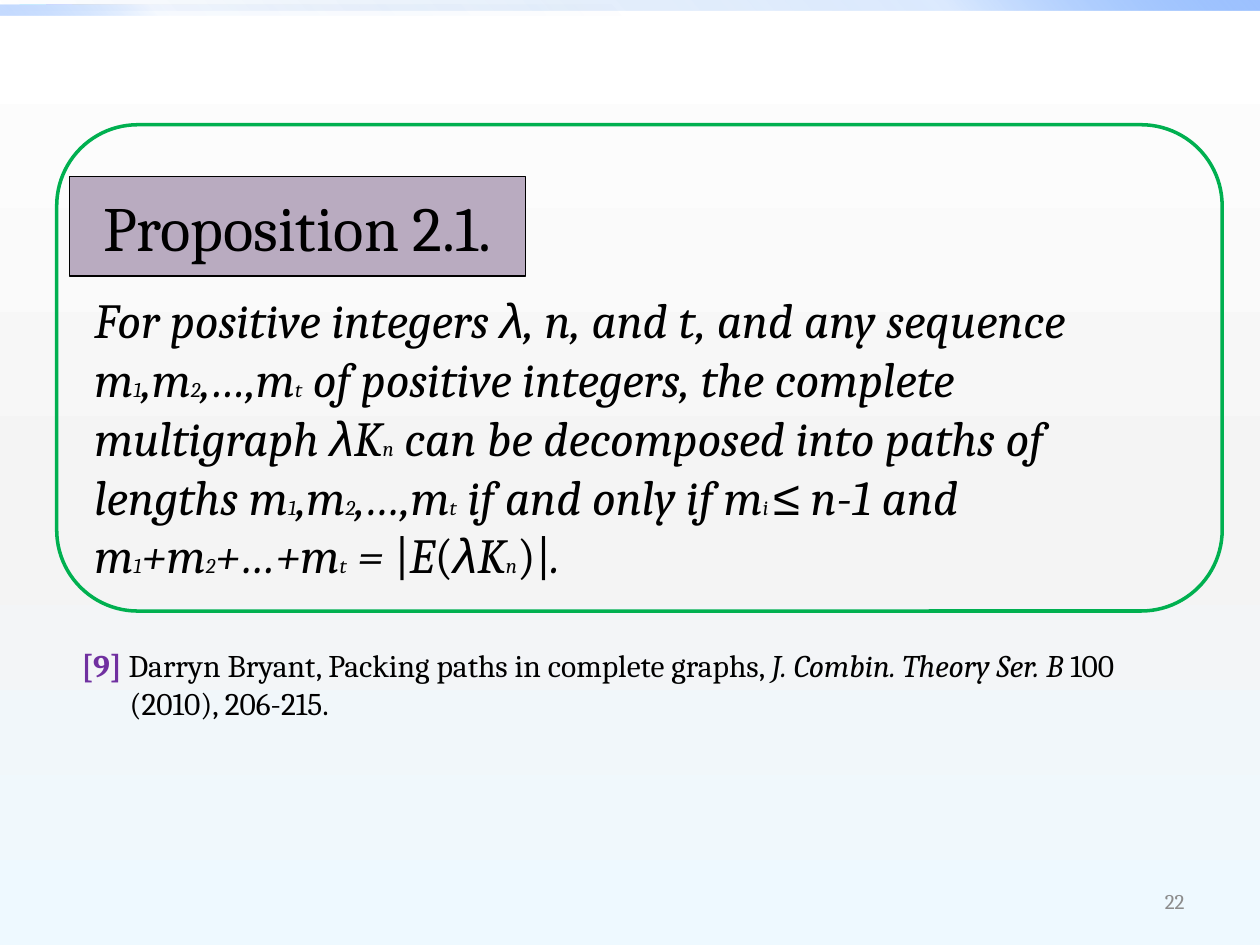
"""Build the slide that states Proposition 2.1 on path decompositions."""
from itertools import groupby

from lxml.etree import SubElement
from pptx import Presentation
from pptx.dml.color import RGBColor
from pptx.enum.shapes import MSO_SHAPE
from pptx.enum.text import MSO_ANCHOR, MSO_AUTO_SIZE, PP_ALIGN
from pptx.oxml.ns import qn
from pptx.util import Inches, Pt

BLACK = RGBColor(0x00, 0x00, 0x00)
GREY = RGBColor(0x8C, 0x8C, 0x8C)
PURPLE = RGBColor(0x70, 0x30, 0xA0)
MAUVE = RGBColor(0xB9, 0xAB, 0xC0)
GREEN = RGBColor(0x00, 0xB0, 0x50)
WHITE = RGBColor(0xFF, 0xFF, 0xFF)
MIST = RGBColor(0xF4, 0xF4, 0xF4)
ICE = RGBColor(0xEE, 0xF9, 0xFF)
NAVY = RGBColor(0x00, 0x58, 0xB7)
BLUE = RGBColor(0x4F, 0x95, 0xFF)
SKY = RGBColor(0x9E, 0xC2, 0xFF)


def add_run(p, text, size=28, font="Cambria", color=BLACK, bold=False, italic=False):
    r = p.add_run()
    r.text = text
    f = r.font
    f.size, f.name, f.bold, f.italic = Pt(size), font, bold, italic
    f.color.rgb = color


def add_math(p, text, italic=True):
    for i, part in enumerate(text.split("~")):
        for symbol, chars in groupby(part, lambda c: c in "λ≤"):
            add_run(p, "".join(chars), size=12 if i % 2 else 28,
                    font="Arial" if symbol else "Cambria", italic=italic)


def set_gradient(fill, element, angle, stops):
    fill.gradient()
    fill.gradient_angle = 360 - angle
    gs_list = element.find(".//" + qn("a:gsLst"))
    for gs in list(gs_list):
        gs_list.remove(gs)
    for pos, color, opacity in stops:
        gs = SubElement(gs_list, qn("a:gs"), pos=str(pos * 1000))
        clr = SubElement(gs, qn("a:srgbClr"), val=str(color))
        SubElement(clr, qn("a:alpha"), val=str(opacity * 1000))


class Deck:
    COLS, ROWS = 100, 75

    def __init__(self):
        self.prs = Presentation()
        self.prs.slide_width, self.prs.slide_height = Inches(10), Inches(7.5)
        self.s = self.prs.slides.add_slide(self.prs.slide_layouts[5])

    def box(self, x, y, w, h):
        col, row = self.prs.slide_width / self.COLS, self.prs.slide_height / self.ROWS
        return int(x * col), int(y * row), int(w * col), int(h * row)

    def background(self, angle, stops):
        set_gradient(self.s.background.fill, self.s._element, angle, stops)

    def shape(self, kind, *at):
        sp = self.s.shapes.add_shape(kind, *self.box(*at))
        sp.shadow.inherit = False
        sp.fill.background()
        sp.line.fill.background()
        return sp

    def bar(self, at, angle, stops):
        sp = self.shape(MSO_SHAPE.RECTANGLE, *at)
        set_gradient(sp.fill, sp._element, angle, stops)

    def frame(self, *at):
        sp = self.shape(MSO_SHAPE.ROUNDED_RECTANGLE, *at)
        sp.line.color.rgb, sp.line.width = GREEN, Pt(2)

    def title(self, text, *at):
        sp = self.s.shapes.title
        sp.left, sp.top, sp.width, sp.height = self.box(*at)
        sp.fill.solid()
        sp.fill.fore_color.rgb = MAUVE
        sp.line.color.rgb, sp.line.width = BLACK, Pt(0.75)
        tf = sp.text_frame
        tf.auto_size, tf.word_wrap = MSO_AUTO_SIZE.NONE, False
        tf.vertical_anchor = MSO_ANCHOR.MIDDLE
        p = tf.paragraphs[0]
        p.alignment = PP_ALIGN.CENTER
        add_run(p, text, size=36)

    def text(self, *at):
        tf = self.s.shapes.add_textbox(*self.box(*at)).text_frame
        tf.word_wrap = True
        return tf


def main():
    deck = Deck()
    deck.background(90, [(0, WHITE, 100), (55, MIST, 100), (100, ICE, 100)])
    deck.bar((0, 0, 100, 0.8), 315, [(0, NAVY, 0), (75, BLUE, 20), (100, SKY, 100)])
    deck.bar((0, 0.4, 50, 0.8), 135, [(0, NAVY, 0), (75, BLUE, 5), (100, SKY, 60)])

    tf = deck.text(71.7, 69.5, 23.3, 4)
    tf.vertical_anchor = MSO_ANCHOR.MIDDLE
    tf.paragraphs[0].alignment = PP_ALIGN.RIGHT
    add_run(tf.paragraphs[0], "22", size=12, color=GREY)

    tf = deck.text(5.5, 50.8, 90.6, 7.1)
    p = tf.paragraphs[0]
    add_run(p, "[9] ", size=18, color=PURPLE, bold=True)
    add_run(p, "Darryn Bryant, Packing paths in complete graphs, ", size=18)
    add_run(p, "J. Combin. Theory Ser. B ", size=18, italic=True)
    add_run(p, "100", size=18)
    p = tf.add_paragraph()
    p._p.get_or_add_pPr().set("marL", str(Inches(0.38)))
    add_run(p, "(2010), 206-215.", size=18)

    deck.title("Proposition 2.1.", 5.5, 14, 36.2, 7.9)

    tf = deck.text(6.5, 22.5, 88.6, 24.6)
    add_math(tf.paragraphs[0],
             "For positive integers λ, n, and t, and any sequence m~1~,m~2~,…,m~t~ of "
             "positive integers, the complete multigraph λK~n~ can be decomposed into "
             "paths of lengths m~1~,m~2~,…,m~t~ if and only if m~i ~≤ n-1 and")
    p = tf.add_paragraph()
    for text, italic in [("m~1~+m~2~+…+m~t~ = ", True), ("|", False), ("E", True),
                         ("(", False), ("λK~n~", True), (")|", False), (".", True)]:
        add_math(p, text, italic)

    deck.frame(4.5, 9.9, 92.5, 38.6)
    deck.prs.save("out.pptx")


if __name__ == "__main__":
    main()
